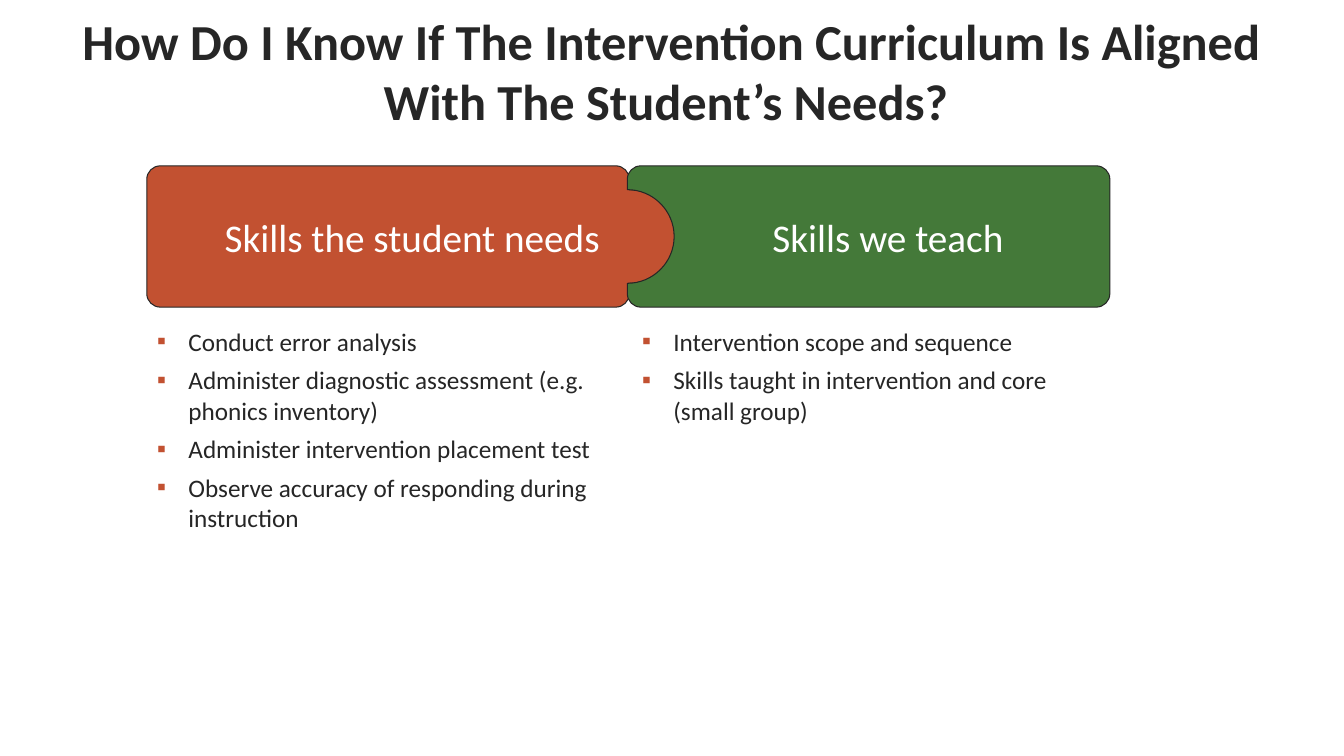
from dataclasses import dataclass

from lxml.etree import SubElement
from pptx import Presentation
from pptx.dml.color import RGBColor
from pptx.enum.text import MSO_ANCHOR, MSO_AUTO_SIZE, PP_ALIGN
from pptx.oxml.ns import qn
from pptx.shapes.autoshape import Shape
from pptx.slide import Slide
from pptx.text.text import TextFrame, _Paragraph
from pptx.util import Cm, Pt

COLORS = {"ink": "262626", "needs": "C25131", "teach": "447939", "white": "FFFFFF"}
FONT = "Calibri"
PIECE_WIDTH, PIECE_HEIGHT = 12.16, 3.56
CORNER_RADIUS, TAB_RADIUS = 0.34, 1.18
ROUNDNESS = 0.55
LIST_TOP, LIST_WIDTH = 8.09, 11.94
BULLET_INDENT = 0.79

Point = tuple[float, float]


@dataclass(frozen=True)
class PuzzlePiece:
    heading: str
    left: float
    top: float
    color: str
    has_tab: bool
    heading_indent: float
    list_left: float
    list_height: float
    items: tuple[str, ...]


@dataclass(frozen=True)
class Turn:
    """A quarter circle that rounds off a corner."""
    start: Point
    corner: Point
    end: Point

    def curve(self) -> list[Point]:
        controls = [
            tuple(a + ROUNDNESS * (b - a) for a, b in zip(tip, self.corner))
            for tip in (self.start, self.end)
        ]
        return [*controls, self.end]


PIECES = (
    PuzzlePiece(
        "Skills the student needs", 3.7, 4.18, "needs", True, 0.03, 3.71, 5.51,
        (
            "Conduct error analysis",
            "Administer diagnostic assessment (e.g. phonics inventory)",
            "Administer intervention placement test",
            "Observe accuracy of responding during instruction",
        ),
    ),
    PuzzlePiece(
        "Skills we teach", 15.81, 4.18, "teach", False, 0.97, 15.93, 2.77,
        (
            "Intervention scope and sequence",
            "Skills taught in intervention and core (small group)",
        ),
    ),
)


def rgb(color: str) -> RGBColor:
    return RGBColor.from_string(COLORS[color])


def style_font(paragraph: _Paragraph, size: int, color: str, bold: bool = False) -> None:
    for run in paragraph.runs:
        run.font.name = FONT
        run.font.size = Pt(size)
        run.font.bold = bold
        run.font.color.rgb = rgb(color)


def piece_turns(piece: PuzzlePiece) -> list[Turn]:
    """Clockwise turns of a rounded box with a tab on the right or a notch on the left."""
    left, top = piece.left, piece.top
    right, bottom = left + PIECE_WIDTH, top + PIECE_HEIGHT
    near_x, far_x = left + CORNER_RADIUS, right - CORNER_RADIUS
    near_y, far_y = top + CORNER_RADIUS, bottom - CORNER_RADIUS
    middle = top + PIECE_HEIGHT / 2
    side = right if piece.has_tab else left
    tip = side + TAB_RADIUS
    direction = 1 if piece.has_tab else -1
    first_y, last_y = middle - direction * TAB_RADIUS, middle + direction * TAB_RADIUS
    bulge = [
        Turn((side, first_y), (tip, first_y), (tip, middle)),
        Turn((tip, middle), (tip, last_y), (side, last_y)),
    ]
    return [
        Turn((far_x, top), (right, top), (right, near_y)),
        *(bulge if piece.has_tab else []),
        Turn((right, far_y), (right, bottom), (far_x, bottom)),
        Turn((near_x, bottom), (left, bottom), (left, far_y)),
        *([] if piece.has_tab else bulge),
        Turn((left, near_y), (left, top), (near_x, top)),
    ]


def merge_into_curves(outline: Shape, steps: list[list[Point]]) -> None:
    """Turn each step of three line points into one cubic curve."""
    lines = iter(list(outline._element.iter(qn("a:lnTo"))))
    for step in steps:
        step_lines = [next(lines) for _ in step]
        if len(step) == 3:
            curve = step_lines[0]
            curve.addprevious(merged := curve.makeelement(qn("a:cubicBezTo")))
            for line in step_lines:
                merged.append(line[0])
                line.getparent().remove(line)


def add_outline(slide: Slide, piece: PuzzlePiece) -> Shape:
    turns = piece_turns(piece)
    start = position = turns[-1].end
    steps: list[list[Point]] = []
    for turn in turns:
        if turn.start != position:
            steps.append([turn.start])
        steps.append(turn.curve())
        position = turn.end
    builder = slide.shapes.build_freeform(Cm(start[0]), Cm(start[1]))
    builder.add_line_segments([(Cm(x), Cm(y)) for step in steps for x, y in step], close=True)
    outline = builder.convert_to_shape()
    merge_into_curves(outline, steps)
    return outline


def add_piece(slide: Slide, piece: PuzzlePiece) -> None:
    outline = add_outline(slide, piece)
    outline.shadow.inherit = False
    outline.fill.solid()
    outline.fill.fore_color.rgb = rgb(piece.color)
    outline.line.color.rgb = rgb("ink")
    outline.line.width = Pt(0.75)
    frame = outline.text_frame
    frame.word_wrap = True
    frame.vertical_anchor = MSO_ANCHOR.MIDDLE
    frame.text = piece.heading
    heading = frame.paragraphs[0]
    heading.alignment = PP_ALIGN.CENTER
    heading._p.get_or_add_pPr().set("marL", str(Cm(piece.heading_indent)))
    style_font(heading, 28, "white")


def add_text_frame(slide: Slide, left: float, top: float, width: float, height: float) -> TextFrame:
    frame = slide.shapes.add_textbox(Cm(left), Cm(top), Cm(width), Cm(height)).text_frame
    frame.word_wrap = True
    return frame


def add_bullet(paragraph: _Paragraph) -> None:
    properties = paragraph._p.get_or_add_pPr()
    properties.set("marL", str(Cm(BULLET_INDENT)))
    properties.set("indent", str(-Cm(BULLET_INDENT)))
    bullet_color = SubElement(properties, qn("a:buClr"))
    SubElement(bullet_color, qn("a:srgbClr")).set("val", COLORS["needs"])
    SubElement(properties, qn("a:buFont")).set("typeface", FONT)
    SubElement(properties, qn("a:buChar")).set("char", "▪")


def add_skill_list(slide: Slide, piece: PuzzlePiece) -> None:
    frame = add_text_frame(slide, piece.list_left, LIST_TOP, LIST_WIDTH, piece.list_height)
    frame.auto_size = MSO_AUTO_SIZE.SHAPE_TO_FIT_TEXT
    frame.text = "\n".join(piece.items)
    for item in frame.paragraphs:
        add_bullet(item)
        item.space_after = Pt(6)
        style_font(item, 18, "ink")


def add_title(slide: Slide) -> None:
    frame = add_text_frame(slide, 1.27, 0, 31.32, 3.56)
    frame.margin_left = frame.margin_right = frame.margin_top = frame.margin_bottom = 0
    frame.vertical_anchor = MSO_ANCHOR.MIDDLE
    frame.text = "How Do I Know If The Intervention Curriculum Is Aligned With The Student’s Needs? "
    question = frame.paragraphs[0]
    question.alignment = PP_ALIGN.CENTER
    style_font(question, 36, "ink", bold=True)


def main() -> None:
    presentation = Presentation()
    presentation.slide_width, presentation.slide_height = Cm(33.87), Cm(19.05)
    slide = presentation.slides.add_slide(presentation.slide_layouts[6])
    add_title(slide)
    for piece in PIECES:
        add_piece(slide, piece)
        add_skill_list(slide, piece)
    presentation.save("out.pptx")


if __name__ == "__main__":
    main()
